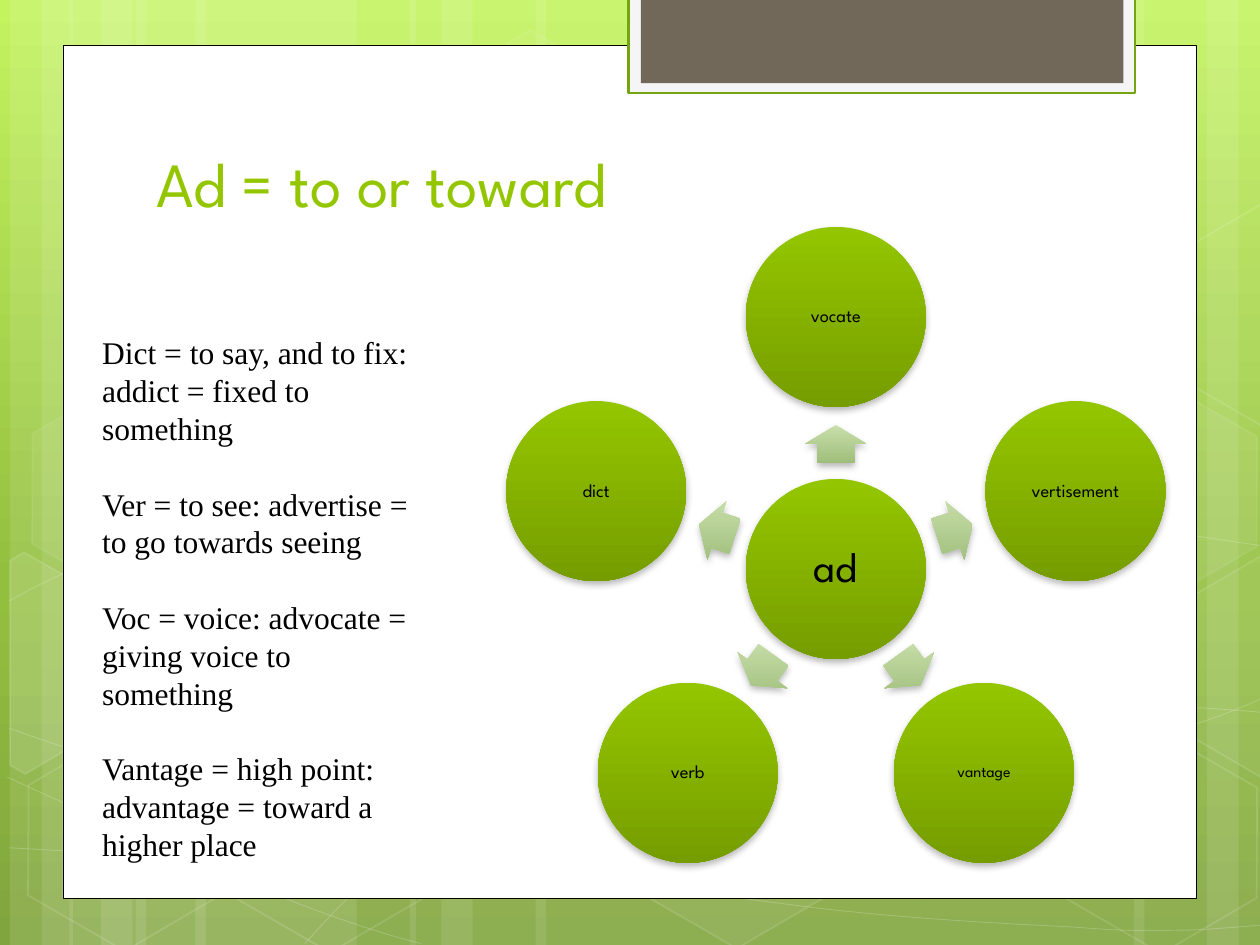
"""Build the slide "Ad = to or toward" with its wheel of word parts."""
import copy
import math
from lxml import etree
from pptx import Presentation, util as u
from pptx.dml.color import RGBColor
from pptx.enum import shapes, text
from pptx.oxml.ns import qn


class Theme:
    heading, body = "League Spartan", "Times New Roman"
    white, black, lime = "FFFFFF", "000000", "94C600"
    frame, tab, tab_line = "F5F5F5", "71685A", "74A510"
    page = ((0, "C3F35F"), (0.62, "93BF3F"), (1, "81A53E"))
    disc = ((0, lime), (1, "769D00"))
    arrow = ((0, "C8DFAB"), (1, "A0BE7B"))
    title_size, hub_size, word_size, small_size, body_size = 36, 24, 10.5, 9, 18


def paint(s, fill=None, alpha=100, line=None, width=1, line_alpha=100):
    s.shadow.inherit = False
    for part, color, opacity in ((s.fill, fill, alpha), (s.line.fill, line, line_alpha)):
        if color is None:
            part.background()
            continue
        part.solid()
        part.fore_color.rgb = RGBColor.from_string(color)
        if opacity < 100:
            clr = part._xPr.find(".//" + qn("a:srgbClr"))
            etree.SubElement(clr, qn("a:alpha"), val=str(opacity * 1000))
    if line:
        s.line.width = u.Pt(width)


def write(s, content, size, font=Theme.heading, color=Theme.black, align=text.PP_ALIGN.LEFT,
          anchor=text.MSO_ANCHOR.TOP, inset=None, top=None, spacing=None, after=0):
    tf = s.text_frame
    tf.word_wrap = True
    tf.vertical_anchor = anchor
    if inset is not None:
        tf.margin_left = tf.margin_right = tf.margin_top = tf.margin_bottom = u.Cm(inset)
    if top is not None:
        tf.margin_top = u.Cm(top)
    for i, line in enumerate(content.split("\n")):
        p = tf.add_paragraph() if i else tf.paragraphs[0]
        p.alignment, p.line_spacing, p.space_after = align, spacing, u.Pt(after)
        r = p.add_run()
        r.text = line
        r.font.name, r.font.size = font, u.Pt(size)
        r.font.color.rgb = RGBColor.from_string(color)


prs = Presentation()
prs.slide_width, prs.slide_height = u.Cm(25.4), u.Cm(19.05)
slide = prs.slides.add_slide(prs.slide_layouts[6])
sp = slide.shapes
MSO = shapes.MSO_SHAPE

bg = slide.background.fill
bg.gradient()
bg.gradient_angle = 270
first = bg.gradient_stops[0]._gs
first.addnext(copy.deepcopy(first))
for stop, (pos, color) in zip(bg.gradient_stops, Theme.page):
    stop.position, stop.color.rgb = pos, RGBColor.from_string(color)

bars = [(18.62, 4.45), (24.33, 1.27), (22.86, 2.11)]
for base, wide in ((0.2, 4.45), (1.4, 4.45), (8.26, 7.82)):
    bars += [(base + 2.54, wide), (base, 1.27), (base + 0.64, 2.11)]
for left, width in bars:
    s = sp.add_shape(MSO.RECTANGLE, u.Cm(left), 0, u.Cm(width), prs.slide_height)
    paint(s, Theme.white, 10)

curves = (
    ((0.18, 17.09), (1.55, 17.17), (2.92, 17.25), (4.83, 17.22), (6.73, 17.2), (9.09, 17.14),
     (11.63, 16.89), (14.17, 16.64), (17.78, 16.15), (20.12, 15.67), (22.43, 15.19),
     (24.82, 14.43), (25.58, 14)),
    ((0.18, 12.12), (0.91, 11.71), (1.65, 11.33), (3.07, 10.95), (4.52, 10.57), (6.58, 10.01),
     (8.81, 9.83), (11.07, 9.65), (13.82, 9.63), (16.61, 9.83), (19.41, 10.03),
     (24.05, 10.82), (25.58, 11.02)),
    ((0.15, 15.67), (3.23, 17.07), (6.27, 18.47), (8.48, 19.02)),
    ((0.18, 14.68), (0.97, 14.96), (1.78, 15.24), (3.25, 15.65), (4.72, 16.03), (6.93, 16.66),
     (9.07, 17.09), (11.18, 17.53), (13.84, 17.98), (15.95, 18.24), (18.06, 18.52),
     (20.32, 18.62), (21.67, 18.69), (22.99, 18.8), (23.34, 18.75), (24, 18.75),
     (24.66, 18.72), (25.12, 18.67), (25.58, 18.64)),
    ((6.15, 19.02), (6.6, 18.52), (7.06, 18.01), (7.67, 17.55), (8.28, 17.09), (9.14, 16.59),
     (9.86, 16.23), (10.57, 15.88), (11, 15.72), (11.94, 15.47), (12.85, 15.22),
     (14.55, 14.86), (15.44, 14.68), (16.36, 14.5), (16.48, 14.5), (17.27, 14.45),
     (18.06, 14.38), (19.3, 14.3), (20.17, 14.27), (21.06, 14.25), (22.5, 14.27),
     (22.5, 14.27), (22.5, 14.27), (24.21, 14.27), (24.21, 14.27), (24.66, 14.3),
     (25.1, 14.33), (25.32, 14.35), (25.55, 14.38), (25.48, 14.35), (25.55, 14.38)),
)
for curve in curves:
    points = [(u.Cm(x), u.Cm(y)) for x, y in curve]
    outline = sp.build_freeform(*points[0])
    outline.add_line_segments(points[1:], close=False)
    s = outline.convert_to_shape()
    segments = list(s._element.spPr.iter(qn("a:lnTo")))
    for a, b, c in zip(segments[::3], segments[1::3], segments[2::3]):
        bezier = etree.SubElement(a.getparent(), qn("a:cubicBezTo"))
        for segment in (a, b, c):
            bezier.append(segment[0])
            segment.getparent().remove(segment)
    paint(s, line=Theme.white, width=0.5, line_alpha=20)

for left, top, alpha, line_alpha in (
        (8.48, 0.91, 4, 8), (12.62, 14.96, 6, 12), (0.28, 15.01, 0, 12), (0.36, 7.92, 7, 8),
        (4.42, 15.04, 0, 12), (19.13, 11.51, 10, 12), (21.18, 15.06, 0, 12),
        (21.18, 7.98, 7, 8)):
    s = sp.add_shape(MSO.HEXAGON, u.Cm(left), u.Cm(top), u.Cm(4.45), u.Cm(3.86))
    s.adjustments[0] = 0.285
    s.rotation = 30
    paint(s, Theme.white if alpha else None, alpha, Theme.white, 1, line_alpha)

left_cut = ((0.2, 11.3), (0.48, 11.13), (2.44, 12.24), (2.41, 14.48), (0.51, 15.6), (0.2, 15.42))
right_cut = ((23.52, 12.32), (25.43, 11.2), (25.63, 11.33), (25.63, 15.57), (25.45, 15.67),
             (23.52, 14.55))
cos, sin = math.cos(math.radians(30)), math.sin(math.radians(30))
for corners, px, py, rise, alpha in (
        (left_cut, 0.91, 13.59, 0, 10), (right_cut, 25.02, 13.21, 0, 4),
        (right_cut, 25.02, 13.21, 7.09, 0)):
    points = [(u.Cm(px + (x - px) * cos + (y - py) * sin),
               u.Cm(py - rise - (x - px) * sin + (y - py) * cos)) for x, y in corners]
    outline = sp.build_freeform(*points[0])
    outline.add_line_segments(points[1:], close=True)
    s = outline.convert_to_shape()
    s.rotation = 30
    paint(s, Theme.white if alpha else None, alpha, Theme.white, 1, 12)

for box, fill, line, width in (
        ((1.27, 0.91, 22.86, 17.2), Theme.white, Theme.black, 0.5),
        ((12.67, -0.05, 10.21, 1.93), Theme.frame, Theme.tab_line, 1.25),
        ((12.92, -0.05, 9.73, 1.73), Theme.tab, None, 0)):
    paint(sp.add_shape(MSO.RECTANGLE, *map(u.Cm, box)), fill, line=line, width=width)

s = sp.add_textbox(u.Cm(2.9), u.Cm(2.86), u.Cm(19.51), u.Cm(1.7))
write(s, "Ad = to or toward", Theme.title_size, color=Theme.lime, anchor=text.MSO_ANCHOR.BOTTOM)

cx, cy, disc, ring, arrow_ring = 16.85, 11.47, 3.63, 5.08, 2.52
wheel = [(MSO.OVAL, 0, 0, disc, disc, "ad", Theme.hub_size)]
for i, word in enumerate(("vocate", "vertisement", "vantage", "verb", "dict")):
    angle = 270 + 72 * i
    size = Theme.small_size if word == "vantage" else Theme.word_size
    wheel += [(MSO.RIGHT_ARROW, angle, arrow_ring, 0.76, 1.24, None, None),
              (MSO.OVAL, angle, ring, disc, disc, word, size)]
for kind, angle, radius, w, h, word, size in wheel:
    x = cx + radius * math.cos(math.radians(angle))
    y = cy + radius * math.sin(math.radians(angle))
    s = sp.add_shape(kind, u.Cm(x - w / 2), u.Cm(y - h / 2), u.Cm(w), u.Cm(h))
    paint(s)
    s.fill.gradient()
    s.fill.gradient_angle = 270
    for stop, (pos, color) in zip(s.fill.gradient_stops, Theme.disc if word else Theme.arrow):
        stop.position, stop.color.rgb = pos, RGBColor.from_string(color)
    spPr = s._element.spPr
    shadow = etree.SubElement(spPr.find(qn("a:effectLst")), qn("a:outerShdw"), dir="5400000",
                              blurRad=str(u.Pt(4)), dist=str(u.Pt(2)), rotWithShape="0")
    clr = etree.SubElement(shadow, qn("a:srgbClr"), val=Theme.black)
    etree.SubElement(clr, qn("a:alpha"), val="28000")
    if word:
        write(s, word, size, align=text.PP_ALIGN.CENTER, anchor=text.MSO_ANCHOR.MIDDLE,
              inset=0.05, spacing=0.9)
    else:
        s.rotation = angle % 360
        s.adjustments[0], s.adjustments[1] = 0.6, 0.5
        spPr.find(qn("a:gradFill")).set("rotWithShape", "0")

s = sp.add_textbox(u.Cm(1.81), u.Cm(5.05), u.Cm(6.73), u.Cm(2.57))
write(s, "Dict = to say, and to fix: addict = fixed to something\n"
         "Ver = to see: advertise = to go towards seeing\n"
         "Voc = voice: advocate = giving voice to something\n"
         "Vantage = high point: advantage = toward a higher place",
      Theme.body_size, font=Theme.body, top=1.67, spacing=u.Pt(21.6), after=21.6)

prs.save("out.pptx")
